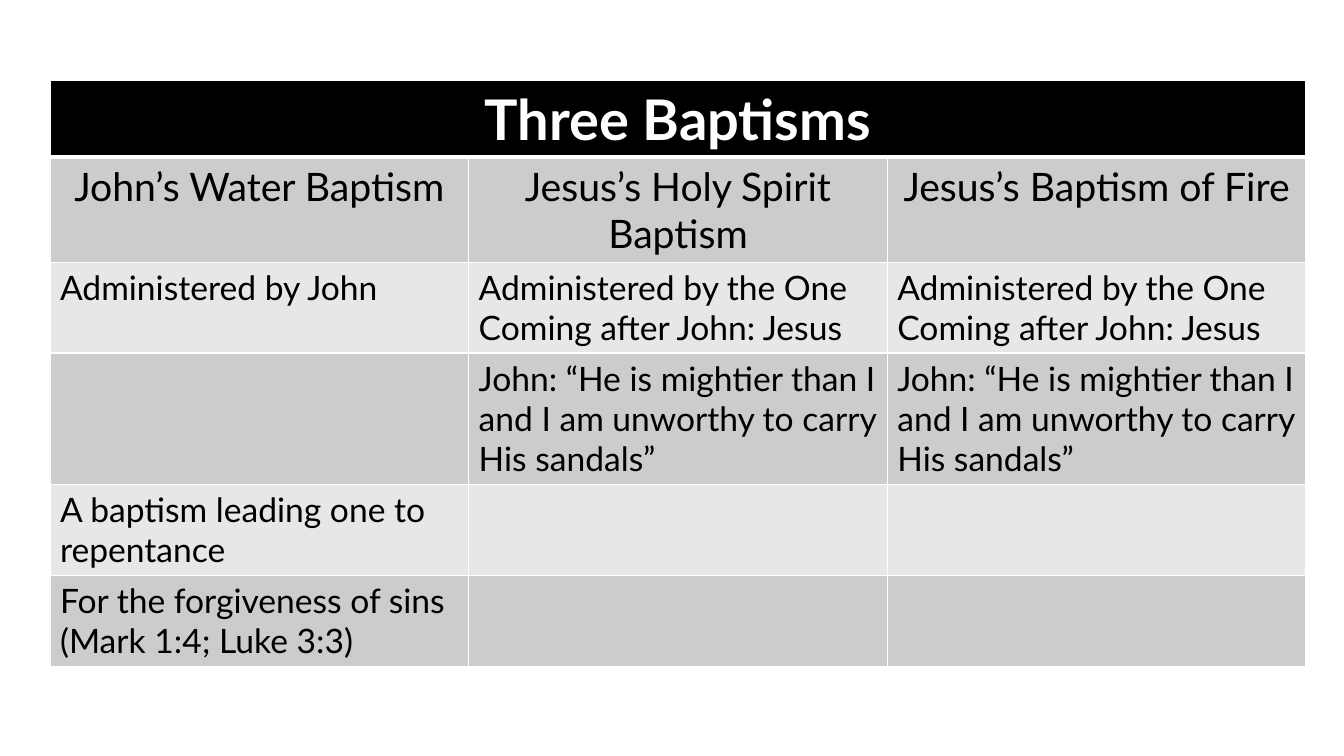
import pptx
import pptx.dml.color
import pptx.enum.text
import pptx.oxml
import pptx.oxml.ns
import pptx.util

PX = 914400 / 100.8
FONT = "Lato"
WHITE, BLACK = "FFFFFF", "000000"
BANDS = ["CCCCCC", "E7E7E7"]
HIGHS = [76, 105, 90, 131, 91, 91]

GIVER = "Administered by the One Coming after John: Jesus"
QUOTE = "John: “He is mightier than I and I am unworthy to carry His sandals”"
ROWS = [
    ["Three Baptisms", "", ""],
    ["John’s Water Baptism", "Jesus’s Holy Spirit Baptism", "Jesus’s Baptism of Fire"],
    ["Administered by John", GIVER, GIVER],
    ["", QUOTE, QUOTE],
    ["A baptism leading one to repentance", "", ""],
    ["For the forgiveness of sins (Mark 1:4; Luke 3:3)", "", ""],
]


def px(num):
    return pptx.util.Emu(round(num * PX))


def color(code):
    return pptx.dml.color.RGBColor.from_string(code)


def edge(cell, side, width):
    props = cell._tc.get_or_add_tcPr()
    props.append(pptx.oxml.parse_xml(
        f'<a:ln{side} {pptx.oxml.ns.nsdecls("a")} w="{pptx.util.Pt(width)}">'
        f'<a:solidFill><a:srgbClr val="{WHITE}"/></a:solidFill></a:ln{side}>'))


def style(cell, row, text):
    for side in "LRTB":
        thick = (row, side) in [(0, "B"), (1, "T")]
        edge(cell, side, 3 if thick else 1)
    cell.fill.solid()
    cell.fill.fore_color.rgb = color(BLACK if row == 0 else BANDS[(row - 1) % 2])
    if not text:
        return
    cell.text_frame.text = text
    para = cell.text_frame.paragraphs[0]
    if row < 2:
        para.alignment = pptx.enum.text.PP_ALIGN.CENTER
    font = para.runs[0].font
    font.name = FONT
    font.size = pptx.util.Pt({0: 40, 1: 28}.get(row, 24))
    font.bold = row == 0
    font.color.rgb = color(WHITE if row == 0 else BLACK)


def grid(slide, left, top, width):
    count = len(ROWS[0])
    frame = slide.shapes.add_table(
        len(ROWS), count, px(left), px(top), px(width), px(sum(HIGHS)))
    table = frame.table
    for col in table.columns:
        col.width = px(width / count)
    for row, (texts, high) in enumerate(zip(ROWS, HIGHS)):
        table.rows[row].height = px(high)
        for col, text in enumerate(texts):
            style(table.cell(row, col), row, text)
    table.cell(0, 0).merge(table.cell(0, count - 1))


def main():
    deck = pptx.Presentation()
    deck.slide_width, deck.slide_height = px(1344), px(756)
    slide = deck.slides.add_slide(deck.slide_layouts[6])
    grid(slide, 50, 80, 1256)
    deck.save("out.pptx")


if __name__ == "__main__":
    main()
